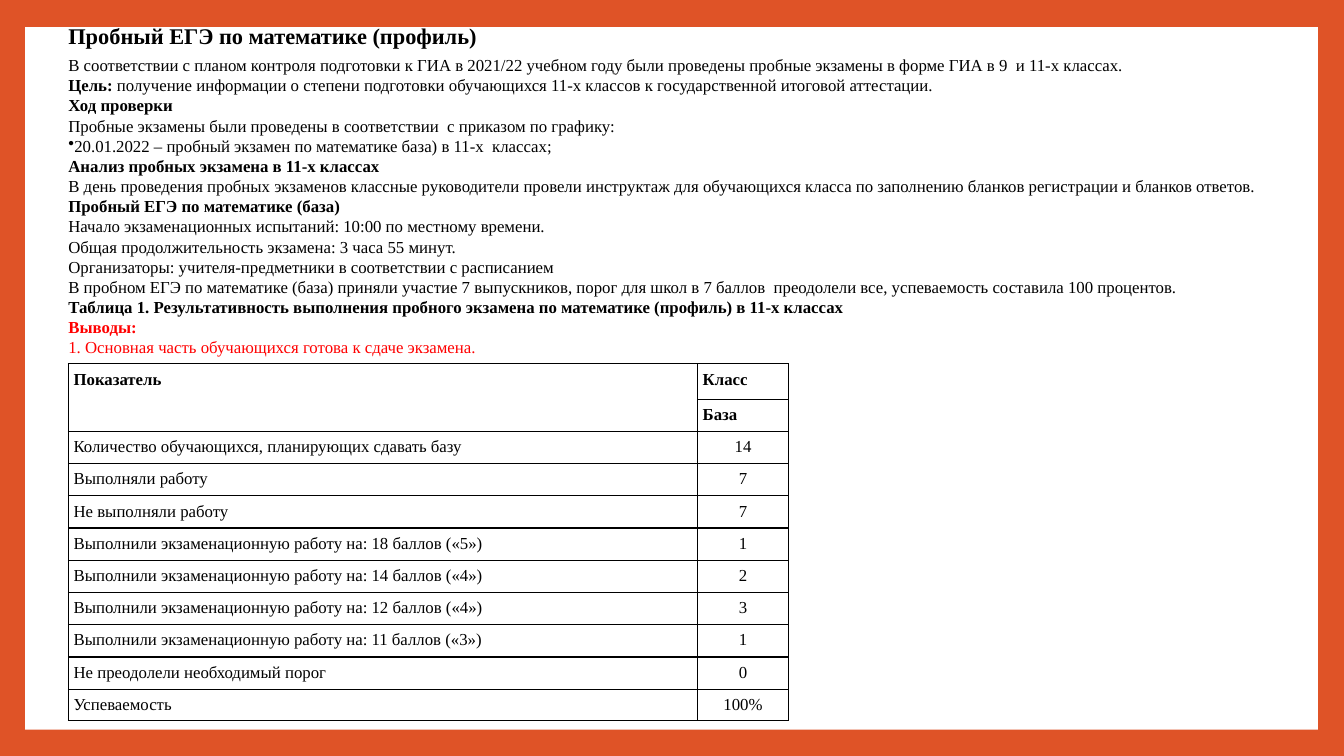
from lxml import etree
from pptx import Presentation
from pptx.dml.color import RGBColor
from pptx.enum.shapes import MSO_SHAPE as Shape
from pptx.enum.text import MSO_ANCHOR as Anchor, PP_ALIGN as Align
from pptx.oxml import parse_xml
from pptx.oxml.ns import qn
from pptx.util import Inches, Pt

ORANGE = RGBColor(0xDF, 0x53, 0x27)
WHITE = RGBColor(0xFF, 0xFF, 0xFF)
BLACK = RGBColor(0, 0, 0)
RED = RGBColor(0xFF, 0, 0)
FONT = "Times New Roman"
DRAWING = "http://schemas.openxmlformats.org/drawingml/2006/main"

TITLE = "Пробный ЕГЭ по математике (профиль)"
GOAL = "Цель: "
EXAM_DATE = "20.01.2022 – пробный экзамен по математике база) в 11-х  классах;"
REPORT = [
    ("В соответствии с планом контроля подготовки к ГИА в 2021/22 учебном году были проведены "
     "пробные экзамены в форме ГИА в 9  и 11-х классах.", False, BLACK),
    (GOAL + "получение информации о степени подготовки обучающихся 11-х классов "
     "к государственной итоговой аттестации.", False, BLACK),
    ("Ход проверки", True, BLACK),
    ("Пробные экзамены были проведены в соответствии  с приказом по графику:", False, BLACK),
    (EXAM_DATE, False, BLACK),
    ("Анализ пробных экзамена в 11-х классах", True, BLACK),
    ("В день проведения пробных экзаменов классные руководители провели инструктаж для "
     "обучающихся класса по заполнению бланков регистрации и бланков ответов.", False, BLACK),
    ("Пробный ЕГЭ по математике (база)", True, BLACK),
    ("Начало экзаменационных испытаний: 10:00 по местному времени.", False, BLACK),
    ("Общая продолжительность экзамена: 3 часа 55 минут.", False, BLACK),
    ("Организаторы: учителя-предметники в соответствии с расписанием", False, BLACK),
    ("В пробном ЕГЭ по математике (база) приняли участие 7 выпускников, порог для школ "
     "в 7 баллов  преодолели все, успеваемость составила 100 процентов.", False, BLACK),
    ("Таблица 1. Результативность выполнения пробного экзамена по математике (профиль) "
     "в 11-х классах", True, BLACK),
    ("Выводы:", True, RED),
    ("1. Основная часть обучающихся готова к сдаче экзамена.", False, RED),
]
HEADER_ROWS = 2
RESULTS = [
    ("Показатель", "Класс"),
    ("", "База"),
    ("Количество обучающихся, планирующих сдавать базу", "14"),
    ("Выполняли работу", "7"),
    ("Не выполняли работу", "7"),
    ("Выполнили экзаменационную работу на: 18 баллов («5»)", "1"),
    ("Выполнили экзаменационную работу на: 14 баллов («4»)", "2"),
    ("Выполнили экзаменационную работу на: 12 баллов («4»)", "3"),
    ("Выполнили экзаменационную работу на: 11 баллов («3»)", "1"),
    ("Не преодолели необходимый порог", "0"),
    ("Успеваемость", "100%"),
]


def style(paragraph, size, bold, color):
    font = paragraph.font
    font.name, font.size, font.bold = FONT, Pt(size), bold
    font.color.rgb = color


def add_panel(slide, left, top, width, height):
    panel = slide.shapes.add_shape(Shape.RECTANGLE, left, top, width, height)
    panel.shadow.inherit = False
    panel.fill.solid()
    panel.fill.fore_color.rgb = WHITE
    panel.line.fill.background()


def add_title(slide, left, top, width, height):
    frame = slide.shapes.add_textbox(left, top, width, height).text_frame
    title = frame.paragraphs[0]
    title.text = TITLE
    style(title, 16, True, BLACK)


def add_report(slide, left, top, width, height):
    frame = slide.shapes.add_textbox(left, top, width, height).text_frame
    frame.word_wrap = True
    frame.vertical_anchor = Anchor.MIDDLE
    for index, (wording, bold, color) in enumerate(REPORT):
        line = frame.add_paragraph() if index else frame.paragraphs[0]
        style(line, 12, bold, color)
        if wording.startswith(GOAL):
            goal = line.add_run()
            goal.text = GOAL
            goal.font.bold = True
        line.add_run().text = wording.removeprefix(GOAL)
        if wording == EXAM_DATE:
            bullet = etree.Element(qn("a:buChar"), char="•")
            line._p.get_or_add_pPr().insert(0, bullet)


def add_borders(cell):
    properties = cell._tc.get_or_add_tcPr()
    for side in "LRTB":
        properties.append(parse_xml(
            f'<a:ln{side} xmlns:a="{DRAWING}" w="{Pt(1)}"><a:solidFill>'
            f'<a:srgbClr val="{BLACK}"/></a:solidFill></a:ln{side}>'))


def fill_cell(cell, wording, bold, align):
    add_borders(cell)
    cell.fill.background()
    cell.margin_left = cell.margin_right = Inches(0.05)
    cell.margin_top = cell.margin_bottom = Inches(0.05)
    entry = cell.text_frame.paragraphs[0]
    entry.text = wording
    entry.alignment = align
    entry.line_spacing = 1.07
    style(entry, 12, bold, BLACK)


def add_results(slide, left, top, width, height):
    results = slide.shapes.add_table(len(RESULTS), 2, left, top, width, height).table
    results.first_row = results.horz_banding = False
    results.columns[1].width = Inches(0.9)
    results.columns[0].width = width - Inches(0.9)
    for index, entries in enumerate(RESULTS):
        results.rows[index].height = Inches(0.32)
        header = index < HEADER_ROWS
        for column, wording in enumerate(entries):
            align = Align.CENTER if column and not header else Align.LEFT
            fill_cell(results.cell(index, column), wording, header, align)
    results.rows[0].height = Inches(0.35)
    results.rows[len(RESULTS) - 1].height = Inches(0.31)
    results.cell(0, 0).merge(results.cell(HEADER_ROWS - 1, 0))


def main():
    deck = Presentation()
    deck.slide_width, deck.slide_height = Inches(13.33), Inches(7.5)
    slide = deck.slides.add_slide(deck.slide_layouts[6])
    slide.background.fill.solid()
    slide.background.fill.fore_color.rgb = ORANGE
    add_panel(slide, Inches(0.25), Inches(0.27), Inches(12.82), Inches(6.97))
    add_results(slide, Inches(0.68), Inches(3.61), Inches(7.14), Inches(3.52))
    add_report(slide, Inches(0.58), Inches(0.48), Inches(13.9), Inches(3.13))
    add_title(slide, Inches(0.58), Inches(0.17), Inches(4.31), Inches(0.37))
    deck.save("out.pptx")


if __name__ == "__main__":
    main()
